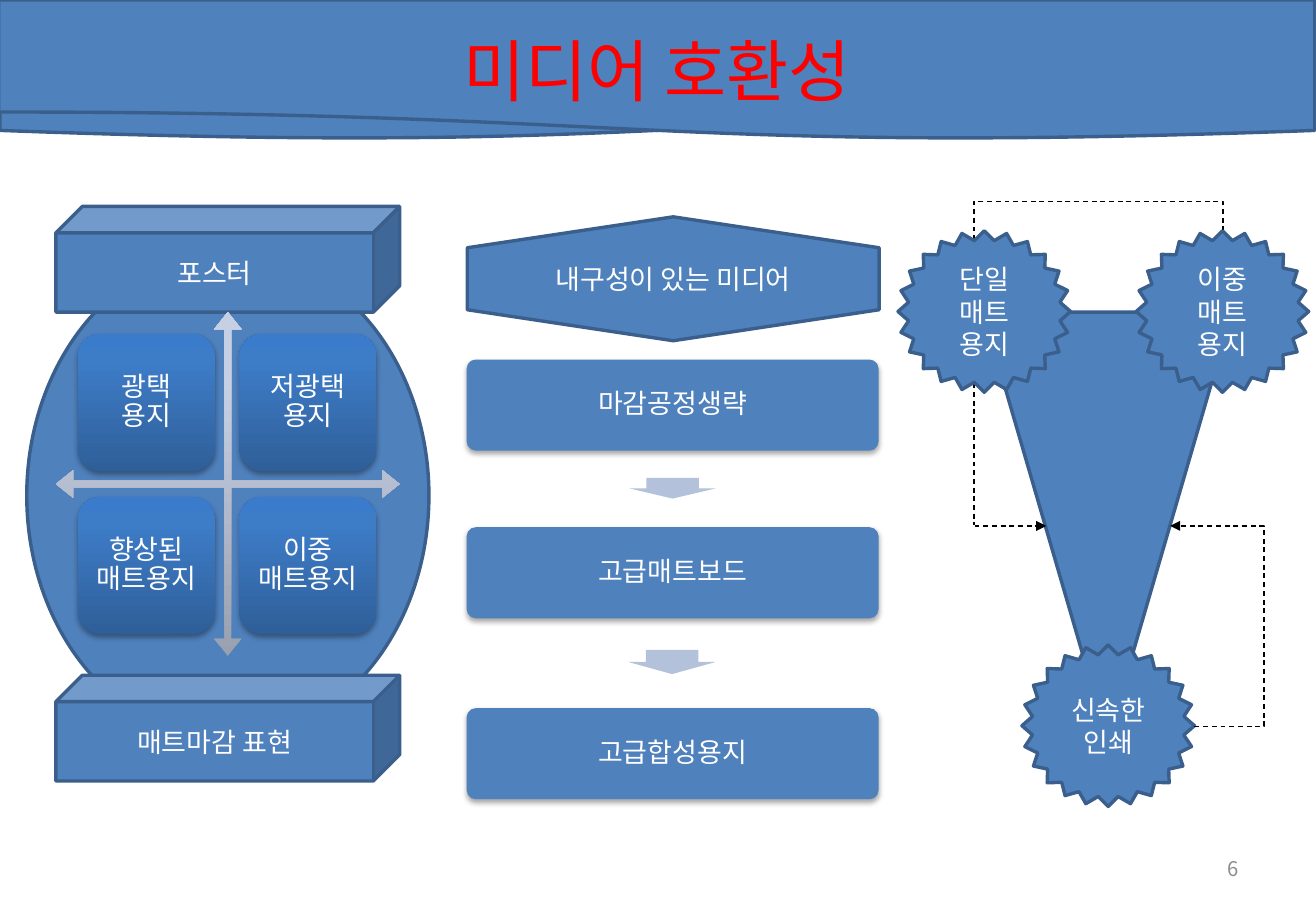
from lxml import etree
from pptx import Presentation
from pptx.dml.color import RGBColor
from pptx.enum.dml import MSO_LINE
from pptx.enum.shapes import MSO_CONNECTOR, MSO_SHAPE
from pptx.enum.text import MSO_ANCHOR, PP_ALIGN
from pptx.oxml.ns import qn
from pptx.util import Pt

PX = 9144
FONT = "Noto Sans CJK KR"
TITLE_ONLY = 5
COLORS = {
    "blue": "4F81BD", "outline": "3A5F8C", "arrow": "B3C1DB", "white": "FFFFFF",
    "title": "FF0000", "number": "8C8C8C", "black": "000000",
}
TILE_GRADIENT = ((0, "2F5F99"), (80, "3D7CC7"), (100, "3A7CCB"))
CROSS_GRADIENT = ((0, "99A0AF"), (80, "C6D0E4"), (100, "C7D1E5"))
CENTER, RIGHT = PP_ALIGN.CENTER, PP_ALIGN.RIGHT
MIDDLE = MSO_ANCHOR.MIDDLE
DASH = MSO_LINE.DASH
STRAIGHT, ELBOW = MSO_CONNECTOR.STRAIGHT, MSO_CONNECTOR.ELBOW
DOCUMENT, MERGE = MSO_SHAPE.FLOWCHART_DOCUMENT, MSO_SHAPE.FLOWCHART_MERGE
OVAL, CUBE, CROSS = MSO_SHAPE.OVAL, MSO_SHAPE.CUBE, MSO_SHAPE.QUAD_ARROW
ROUNDED, HEXAGON = MSO_SHAPE.ROUNDED_RECTANGLE, MSO_SHAPE.HEXAGON
ARROW, STAR = MSO_SHAPE.RIGHT_ARROW, MSO_SHAPE.STAR_24_POINT


def color(name):
    return RGBColor.from_string(COLORS[name])


def add_xml(parent, tag, **attributes):
    return etree.SubElement(parent, qn(tag), attributes)


def write_text(shape, *lines, size=16, ink="white", align=CENTER, spacing=None,
               margin=None, soft_breaks=False):
    frame = shape.text_frame
    frame.word_wrap = True
    frame.vertical_anchor = MIDDLE
    if margin is not None:
        frame.margin_left = frame.margin_right = margin * PX
        frame.margin_top = frame.margin_bottom = margin * PX
    paragraph = frame.paragraphs[0]
    for index, line in enumerate(lines):
        if index and soft_breaks:
            paragraph.add_line_break()
        elif index:
            paragraph = frame.add_paragraph()
        paragraph.alignment = align
        paragraph.line_spacing = spacing
        run = paragraph.add_run()
        run.text = line
        run.font.size = Pt(size)
        run.font.name = FONT
        run.font.color.rgb = color(ink)
        add_xml(run.font._element, "a:ea", typeface=FONT)


class SlideBuilder:
    def __init__(self, presentation):
        self.slide = presentation.slides.add_slide(presentation.slide_layouts[TITLE_ONLY])

    def shape(self, kind, left, top, width, height, fill="blue", gradient=None,
              outlined=True, shadow=False, adjustments=(), rotation=0):
        shape = self.slide.shapes.add_shape(kind, left * PX, top * PX, width * PX, height * PX)
        shape.rotation = rotation
        for index, value in enumerate(adjustments):
            shape.adjustments[index] = value
        if gradient:
            self.gradient(shape, gradient)
        else:
            shape.fill.solid()
            shape.fill.fore_color.rgb = color(fill)
        if outlined:
            shape.line.color.rgb = color("outline")
            shape.line.width = Pt(2)
        else:
            shape.line.fill.background()
        shape.shadow.inherit = False
        if shadow:
            effects = shape._element.spPr.find(qn("a:effectLst"))
            outer = add_xml(effects, "a:outerShdw", blurRad="40000", dist="23000",
                            dir="5400000", rotWithShape="0")
            shade = add_xml(outer, "a:srgbClr", val=COLORS["black"])
            add_xml(shade, "a:alpha", val="35000")
        return shape

    def gradient(self, shape, stops):
        shape.fill.gradient()
        shape.fill.gradient_angle = 90
        stop_list = shape._element.spPr.find(".//" + qn("a:gsLst"))
        for stop in list(stop_list):
            stop_list.remove(stop)
        for position, value in stops:
            stop = add_xml(stop_list, "a:gs", pos=str(position * 1000))
            add_xml(stop, "a:srgbClr", val=value)

    def panel(self, left, top, width, height, *lines, **style):
        shape = self.shape(ROUNDED, left, top, width, height,
                           outlined=False, shadow=True, **style)
        write_text(shape, *lines, spacing=0.9, margin=7, soft_breaks=True)

    def connector(self, kind, begin, end, bend=None, rotation=0, arrowhead=True):
        points = [value * PX for value in (*begin, *end)]
        connector = self.slide.shapes.add_connector(kind, *points)
        connector.line.color.rgb = color("black")
        connector.line.width = Pt(0.75)
        connector.line.dash_style = DASH
        properties = connector._element.spPr
        if arrowhead:
            add_xml(properties.find(qn("a:ln")), "a:tailEnd", type="triangle")
        add_xml(properties, "a:effectLst")
        if rotation:
            properties.find(qn("a:xfrm")).set("rot", str(rotation * 60000))
        if bend is not None:
            guides = properties.find(".//" + qn("a:avLst"))
            add_xml(guides, "a:gd", name="adj1", fmla=f"val {round(bend * 100000)}")

    def title(self, left, top, width, height, text):
        title = self.slide.shapes.title
        title.left, title.top = left * PX, top * PX
        title.width, title.height = width * PX, height * PX
        title._element.getparent().append(title._element)
        write_text(title, text, size=40, ink="title")

    def label(self, left, top, width, height, text, **style):
        box = self.slide.shapes.add_textbox(left * PX, top * PX, width * PX, height * PX)
        write_text(box, text, **style)


def add_header(builder):
    builder.shape(DOCUMENT, 0, 0, 1083, 115)
    wave = builder.shape(DOCUMENT, -1, 0, 1083, 115)
    wave._element.spPr.find(qn("a:xfrm")).set("flipH", "1")
    builder.title(-2, 0, 1086, 115, "미디어 호환성")
    builder.label(776, 695, 253, 40, "6", size=12, ink="number", align=RIGHT)


def add_poster_matrix(builder):
    builder.shape(OVAL, 22, 207, 331, 402)
    for top, text in ((170, "포스터"), (556, "매트마감 표현")):
        write_text(builder.shape(CUBE, 46, top, 283, 87), text)
    builder.shape(CROSS, 46, 257, 283, 283, gradient=CROSS_GRADIENT,
                  outlined=False, adjustments=(0.02, 0.04, 0.05))
    tiles = (("광택", "용지"), ("저광택", "용지"), ("향상된", "매트용지"), ("이중", "매트용지"))
    for index, lines in enumerate(tiles):
        row, column = divmod(index, 2)
        builder.panel(64 + 133 * column, 275 + 134 * row, 113, 113, *lines,
                      gradient=TILE_GRADIENT)


def add_durable_media(builder):
    heading = builder.shape(HEXAGON, 503, 60, 102, 339, rotation=90)
    heading.text_frame._txBody.bodyPr.set("vert", "vert270")
    write_text(heading, "내구성이 있는 미디어")
    for top, text in ((296, "마감공정생략"), (434, "고급매트보드"), (583, "고급합성용지")):
        builder.panel(384, top, 339, 75, text, adjustments=(0.1,))
    for left, top, width in ((545, 366, 17), (543, 509, 20)):
        builder.shape(ARROW, left, top, width, 72, fill="arrow", outlined=False,
                      adjustments=(0.6, 0.5), rotation=90)


def add_matte_papers(builder):
    builder.connector(ELBOW, (1025, 414), (783, 209), bend=-0.103, rotation=270,
                      arrowhead=False)
    builder.shape(MERGE, 809, 257, 205, 352)
    stars = (
        (841, 531, ("신속한", "인쇄")),
        (739, 190, ("단일", "매트", "용지")),
        (935, 190, ("이중", "매트", "용지")),
    )
    for left, top, lines in stars:
        star = builder.shape(STAR, left, top, 142, 133, adjustments=(0.442,))
        write_text(star, *lines)
    builder.connector(ELBOW, (983, 598), (963, 433), bend=-2.87)
    builder.connector(STRAIGHT, (802, 433), (861, 433))


def main():
    presentation = Presentation()
    presentation.slide_width = 1083 * PX
    presentation.slide_height = 750 * PX
    builder = SlideBuilder(presentation)
    add_header(builder)
    add_poster_matrix(builder)
    add_durable_media(builder)
    add_matte_papers(builder)
    presentation.save("out.pptx")


if __name__ == "__main__":
    main()
